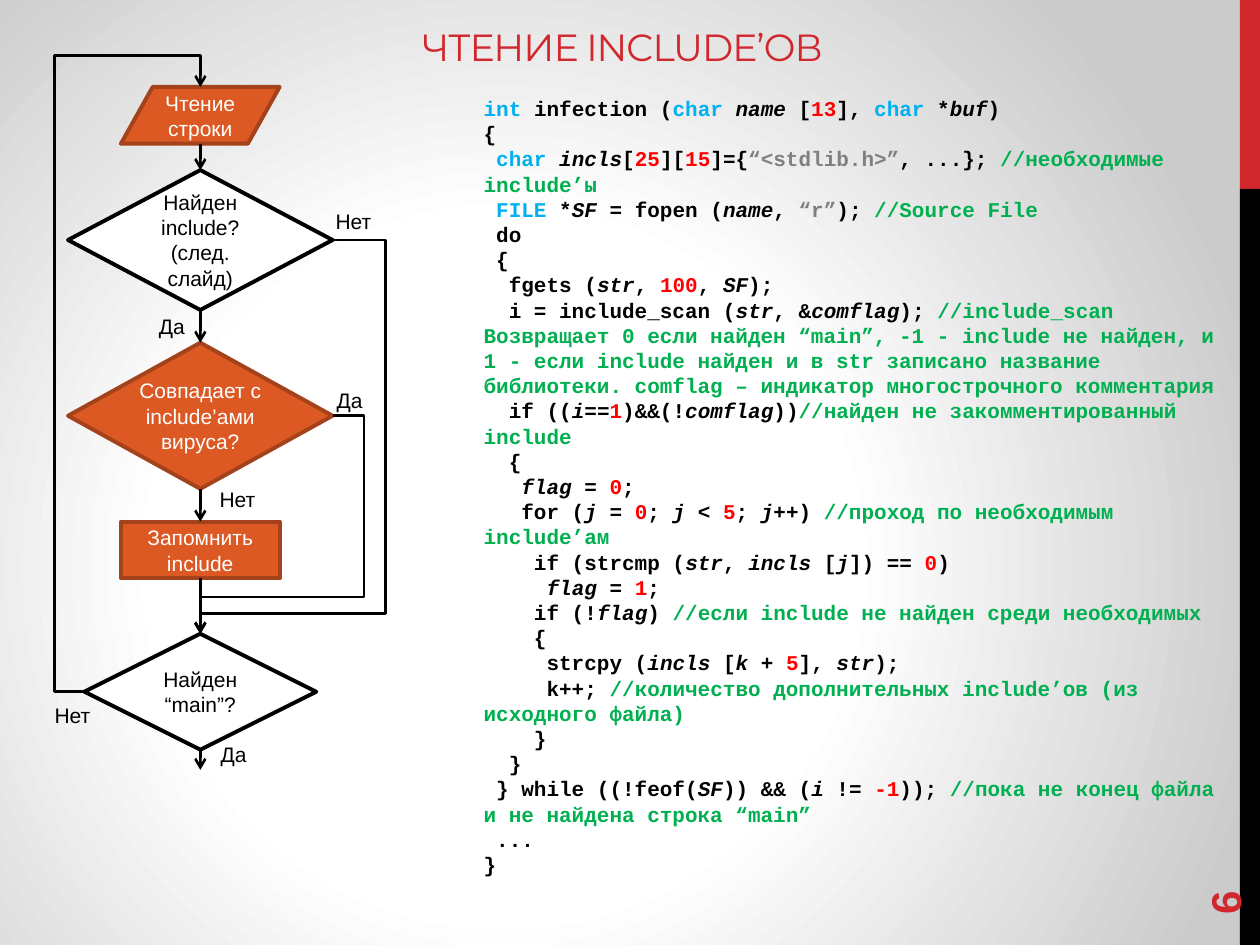
from lxml import etree
from pptx import Presentation
from pptx.dml.color import RGBColor
from pptx.enum.shapes import MSO_CONNECTOR, MSO_SHAPE
from pptx.enum.text import MSO_ANCHOR, PP_ALIGN
from pptx.oxml import parse_xml
from pptx.oxml.ns import nsdecls, qn
from pptx.util import Inches, Pt

RECT, DIAMOND = MSO_SHAPE.RECTANGLE, MSO_SHAPE.FLOWCHART_DECISION
DATA = MSO_SHAPE.FLOWCHART_DATA
STRAIGHT, ELBOW = MSO_CONNECTOR.STRAIGHT, MSO_CONNECTOR.ELBOW
TOP, MIDDLE, BOTTOM = MSO_ANCHOR.TOP, MSO_ANCHOR.MIDDLE, MSO_ANCHOR.BOTTOM
LEFT, CENTER = PP_ALIGN.LEFT, PP_ALIGN.CENTER

COLUMNS, ROWS = 100, 75  # grid of the slide
CELL = Inches(0.1)
RED, BLACK, WHITE = "D1282E", "000000", "FFFFFF"
ORANGE, RUST = "DC5924", "A3421B"

# Marks in the code: @keyword@  ~variable~  #number#  $string$  //comment to the end
MARKS = {"@": "00B0F0", "~": BLACK, "#": "FF0000", "$": "808080"}
COMMENT = "00B050"
CODE = (
    "@int@ infection (@char @~name~ [#13#], @char@ *~buf~)",
    "{",
    " @char @~incls~[#25#][#15#]={$“<stdlib.h>”$, ...}; //необходимые include’ы",
    " @FILE@ *~SF~ = fopen (~name~, $“r”$); //Source File",
    " do",
    " {",
    "  fgets (~str~, #100#, ~SF~);",
    "  i = include_scan (~str~, &~comflag~); //include_scan Возвращает 0 если найден “main”, "
    "-1 - include не найден, и 1 - если include найден и в str записано название библиотеки. "
    "comflag – индикатор многострочного комментария",
    "  if ((~i~==#1#)&&(!~comflag~))//найден не закомментированный include",
    "  {",
    "   ~flag ~= #0#;",
    "   for (~j ~= #0#; ~j~ < #5#; ~j~++) //проход по необходимым include’ам",
    "    if (strcmp (~str~, ~incls ~[~j~]) == #0#)",
    "     ~flag ~= #1#;",
    "    if (!~flag~) //если include не найден среди необходимых",
    "    {",
    "     strcpy (~incls ~[~k ~+ #5#], ~str~);",
    "     k++; //количество дополнительных include’ов (из исходного файла)",
    "    }",
    "  }",
    " } while ((!feof(~SF~)) && (~i~ != #-1#)); //пока не конец файла и не найдена строка “main”",
    " ...",
    "}",
)


def cells(*counts):
    return [round(count * CELL) for count in counts]


def color(value):
    return RGBColor.from_string(value)


def write(para, text, size=12, font="Arial", ink=BLACK, bold=False, italic=False, spacing=None):
    span = para.add_run()
    span.text = text
    span.font.size, span.font.name = Pt(size), font
    span.font.bold, span.font.italic = bold, italic
    span.font.color.rgb = color(ink)
    if spacing:
        span.font._element.set("spc", str(round(spacing * 100)))


def prepare(shape, anchor, inset=1):
    frame = shape.text_frame
    frame.word_wrap, frame.vertical_anchor = True, anchor
    frame.margin_left = frame.margin_right = round(inset * CELL)
    return frame


def fill_text(frame, text, align=CENTER, leading=14.4, **style):
    for index, line in enumerate(text.split("\n")):
        para = frame.add_paragraph() if index else frame.paragraphs[0]
        para.alignment = align
        if leading:
            para.line_spacing = Pt(leading)
        write(para, line, **style)


def add_label(page, box, text, anchor=MIDDLE, **style):
    label = page.shapes.add_textbox(*cells(*box))
    fill_text(prepare(label, anchor), text, **style)
    return label


def add_block(page, kind, box, fill, line=None):
    block = page.shapes.add_shape(kind, *cells(*box))
    block.shadow.inherit = False
    block.fill.solid()
    block.fill.fore_color.rgb = color(fill)
    if line:
        block.line.color.rgb, block.line.width = color(line), Pt(2.25)
    else:
        block.line.fill.background()
    return block


def add_arrow(page, start, end, rail=None, lane=None):
    """Straight arrow, or one that leaves along a rail and comes back along a lane."""
    kind = STRAIGHT if rail is None else ELBOW
    arrow = page.shapes.add_connector(kind, *cells(*start, *end))
    arrow.line.color.rgb, arrow.line.width = color(BLACK), Pt(1.5)
    shape_format = arrow.element.spPr
    etree.SubElement(shape_format.find(qn("a:ln")), qn("a:tailEnd"), type="arrow")
    etree.SubElement(shape_format, qn("a:effectLst"))
    if rail is None:
        return
    geometry = shape_format.find(qn("a:prstGeom"))
    geometry.set("prst", "bentConnector4")
    guides = geometry.find(qn("a:avLst"))
    shares = ((rail - start[0]) / (end[0] - start[0]), (lane - start[1]) / (end[1] - start[1]))
    for number, share in enumerate(shares, 1):
        etree.SubElement(guides, qn("a:gd"), name=f"adj{number}", fmla=f"val {round(share * 100000)}")
    if end[1] < start[1]:  # upward: half a turn plus a mirror
        frame = shape_format.find(qn("a:xfrm"))
        frame.attrib.pop("flipV", None)
        frame.set("rot", "10800000")
        frame.set("flipH", "1")


def paint_background(page):
    page.background.fill.solid()
    solid = page.element.find(".//" + qn("p:bgPr")).find(qn("a:solidFill"))
    stops = "".join(f'<a:gs pos="{place * 1000}"><a:srgbClr val="{value}"/></a:gs>'
                    for place, value in ((0, WHITE), (44, WHITE), (100, "CBCBCB")))
    solid.getparent().replace(solid, parse_xml(
        f'<a:gradFill {nsdecls("a")} rotWithShape="1"><a:gsLst>{stops}</a:gsLst><a:path path="circle">'
        '<a:fillToRect l="40000" t="60000" r="60000" b="40000"/></a:path></a:gradFill>'))


def side_band(page, box):
    left, top, width, height = box
    add_block(page, RECT, (left, top, width, height / 5), RED)
    add_block(page, RECT, (left, top + height / 5, width, height * 4 / 5), BLACK)
    number = add_label(page, (left - 8.4, top + 64.4, 14.4, 4), "6", align=LEFT,
                       leading=None, size=24, ink=RED, bold=True)
    number.rotation = 270


def code_listing(page, box):
    frame = prepare(page.shapes.add_textbox(*cells(*box)), TOP)
    for index, line in enumerate(CODE):
        para = frame.add_paragraph() if index else frame.paragraphs[0]
        para.line_spacing = Pt(14.4)
        code, slashes, comment = line.partition("//")
        spans, mark = [("", "")], ""
        for letter in code:
            if letter in MARKS:
                mark = "" if mark else letter
                spans.append((mark, ""))
            else:
                spans[-1] = (mark, spans[-1][1] + letter)
        for mark, text in spans:
            if text:
                write(para, text, font="Courier New", bold=True,
                      ink=MARKS.get(mark, BLACK), italic=mark == "~")
        if comment:
            write(para, slashes + comment, font="Courier New", bold=True, ink=COMMENT)


def flowchart(page, box):
    left, top, width, height = box
    axis = left + 11.6
    plain, accent = (WHITE, BLACK, BLACK), (ORANGE, RUST, WHITE)
    # Kind, top, width, height, inset, colours, text
    steps = (
        (DATA, 2.5, 12.6, 4.5, 1, accent, "Чтение строки"),
        (DIAMOND, 9.1, 21, 11.1, 0.8, plain, "Найден include?\n(след. слайд)"),
        (DIAMOND, 22.8, 21, 11.6, 0, accent, "Совпадает с include’ами вируса?"),
        (RECT, 37, 12.6, 4.5, 1, accent, "Запомнить include"),
        (DIAMOND, 45.9, 18.4, 9.2, 1, plain, "Найден “main”?"),
    )
    for kind, drop, wide, tall, inset, (fill, line, ink), text in steps:
        block = add_block(page, kind, (axis - wide / 2, top + drop, wide, tall), fill, line)
        fill_text(prepare(block, MIDDLE, inset), text, ink=ink)

    # Straight arrows down the axis
    next_tops = [step[1] for step in steps[1:]] + [height]
    for step, next_top in zip(steps, next_tops):
        add_arrow(page, (axis, top + step[1] + step[3]), (axis, top + next_top))

    # Detours: from step, to step, side, rail, lane
    for source, target, side, rail, lane in (
            (1, 4, 1, width, 44.3), (2, 4, 1, 24.6, 43), (4, 0, -1, 0, 0)):
        _, drop, wide, tall = steps[source][:4]
        add_arrow(page, (axis + side * wide / 2, top + drop + tall / 2),
                  (axis, top + steps[target][1]), left + rail, top + lane)

    # Answers beside the arrows
    for text, x, y in (("Да", 6.7, 19.6), ("Да", 20.8, 25.5), ("Нет", 21.1, 11.3),
                       ("Нет", 11.9, 33.4), ("Да", 11.6, 53.6), ("Нет", -1.2, 50.5)):
        add_label(page, (left + x, top + y, 5.3, 3.7), text)


def main():
    deck = Presentation()
    deck.slide_width, deck.slide_height = cells(COLUMNS, ROWS)
    page = deck.slides.add_slide(deck.slide_layouts[6])
    paint_background(page)
    side_band(page, (98.4, 0, 1.6, ROWS))
    add_label(page, (0, 1.7, 98.8, 4.3), "ЧТЕНИЕ INCLUDE’ОВ", anchor=BOTTOM, leading=None,
              size=21.6, font="Montserrat", ink=RED, spacing=-0.6)
    code_listing(page, (37.4, 7.1, 61.4, 67.4))
    flowchart(page, (4.3, 4.4, 26.3, 56.7))
    deck.save("out.pptx")


if __name__ == "__main__":
    main()
